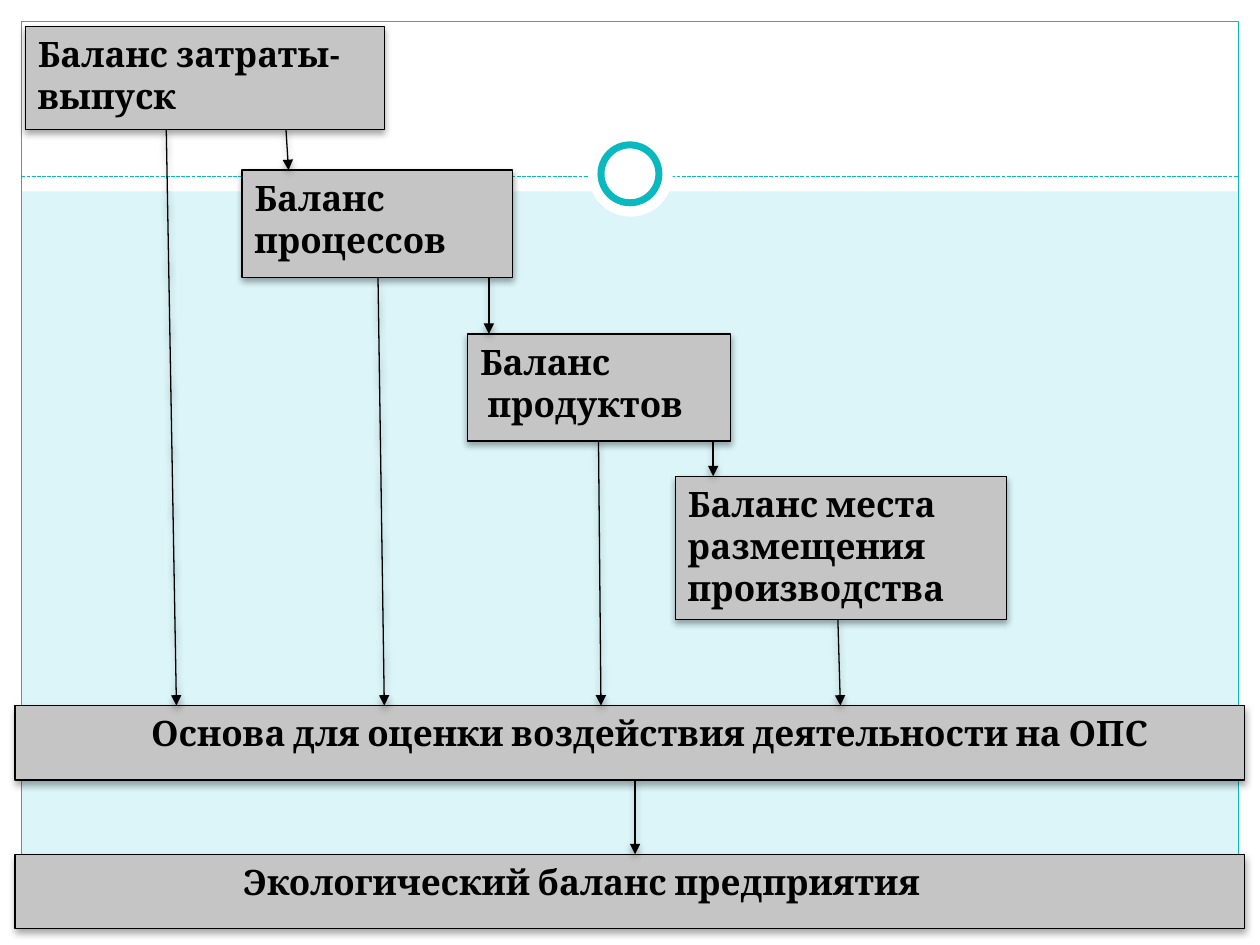
from lxml import etree
from pptx import Presentation
from pptx.dml.color import RGBColor
from pptx.enum.dml import MSO_LINE
from pptx.enum.shapes import MSO_CONNECTOR, MSO_SHAPE
from pptx.enum.text import MSO_ANCHOR, PP_ALIGN
from pptx.oxml import parse_xml
from pptx.oxml.ns import nsdecls, qn
from pptx.util import Inches, Pt

RECT, OVAL = MSO_SHAPE.RECTANGLE, MSO_SHAPE.OVAL
STRAIGHT, DASH = MSO_CONNECTOR.STRAIGHT, MSO_LINE.SQUARE_DOT
LEFT, TOP = PP_ALIGN.LEFT, MSO_ANCHOR.TOP
COLORS = {name: RGBColor.from_string(value) for name, value in {
    "back": "DBF5F9", "white": "FFFFFF", "accent": "0AB8BF",
    "box": "C5C5C5", "ink": "000000"}.items()}
SHADOW = (f'<a:effectLst {nsdecls("a")}><a:outerShdw blurRad="{Pt(4)}" dist="{Pt(2)}" '
          'dir="5400000" rotWithShape="0"><a:srgbClr val="000000"><a:alpha val="35000"/>'
          '</a:srgbClr></a:outerShdw></a:effectLst>')

deck = Presentation()
deck.slide_width, deck.slide_height = Inches(10), Inches(7.5)
COLUMN, ROW = deck.slide_width / 10, deck.slide_height / 7.5  # 10 x 7.5 grid
page = deck.slides.add_slide(deck.slide_layouts[6])
page.background.fill.solid()
page.background.fill.fore_color.rgb = COLORS["back"]


def add_block(kind, left, top, width, height, fill=None, line=None, weight=0.75):
    block = page.shapes.add_shape(kind, int(left * COLUMN), int(top * ROW),
                                  int(width * COLUMN), int(height * ROW))
    block.shadow.inherit = False
    if fill:
        block.fill.solid()
        block.fill.fore_color.rgb = COLORS[fill]
    else:
        block.fill.background()
    if line:
        block.line.color.rgb = COLORS[line]
        block.line.width = Pt(weight)
    else:
        block.line.fill.background()
    return block


def add_line(x1, y1, x2, y2, color):
    line = page.shapes.add_connector(STRAIGHT, int(x1 * COLUMN), int(y1 * ROW),
                                     int(x2 * COLUMN), int(y2 * ROW))
    line.line.color.rgb = COLORS[color]
    line.line.width = Pt(0.75)
    return line


# Page frame: white margins and header, thin border, dashed rule and ring
EDGE, HEADER = 0.17, 1.52
for area in [(0, 7.5 - EDGE, 10, EDGE), (0, 0, 10, HEADER),
             (0, 0, EDGE, 7.5), (10 - EDGE, 0, EDGE, 7.5)]:
    add_block(RECT, *area, fill="white")
add_block(RECT, EDGE, EDGE, 10 - 2 * EDGE, 7.5 - 2 * EDGE, line="accent")
rule = add_line(EDGE, 1.4, 10 - EDGE, 1.4, "accent")
rule.line.dash_style = DASH
rule._element.spPr.append(parse_xml(f'<a:effectLst {nsdecls("a")}/>'))
add_block(OVAL, 4.67, 1.05, 0.67, 0.67, fill="white")
add_block(OVAL, 4.77, 1.15, 0.46, 0.46, fill="white", line="accent", weight=4)

# Balance steps and the two result bars: left, top, width, height, text inset, lines
BASIS, RESULT, BAR = 5.6, 6.78, 0.59
boxes = [
    (0.2, 0.21, 2.85, 0.82, 0.1, ["Баланс затраты-выпуск"]),
    (1.92, 1.35, 2.15, 0.85, 0.1, ["Баланс", "процессов"]),
    (3.71, 2.65, 2.09, 0.85, 0.1, ["Баланс", " продуктов"]),
    (5.36, 3.78, 2.63, 1.14, 0.1, ["Баланс места размещения", "производства"]),
    (0.12, RESULT, 9.76, BAR, 1.81, ["Экологический баланс предприятия"]),
    (0.12, BASIS, 9.76, BAR, 1.08, ["Основа для оценки воздействия деятельности на ОПС"]),
]
for left, top, width, height, inset, lines in boxes:
    box = add_block(RECT, left, top, width, height, fill="box", line="ink")
    box._element.spPr.replace(box._element.spPr.find(qn("a:effectLst")), parse_xml(SHADOW))
    frame = box.text_frame
    frame.word_wrap = True
    frame.vertical_anchor = TOP
    frame.margin_left = Inches(inset)
    frame.text = "\n".join(lines)
    for para in frame.paragraphs:
        para.alignment = LEFT
        para.font.name, para.font.size, para.font.bold = "Cambria", Pt(20), True
        para.font.color.rgb = COLORS["ink"]

# Arrows: each step leads to the next one and to the basis bar
step_tops = [top for _, top, *_ in boxes[:4]]
step_ends = [top + height for _, top, _, height, *_ in boxes[:4]]
to_basis = [(1.32, 1.4), (3, 3.05), (4.75, 4.77), (6.65, 6.67)]
to_next = [(2.27, 2.29), (3.88, 3.88), (5.66, 5.66)]
arrows = [(5.04, BASIS + BAR, 5.04, RESULT)]
arrows += [(x1, end, x2, BASIS) for (x1, x2), end in zip(to_basis, step_ends)]
arrows += [(x1, end, x2, top) for (x1, x2), end, top in zip(to_next, step_ends, step_tops[1:])]
for ends in arrows:
    arrow = add_line(*ends, "ink")
    etree.SubElement(arrow.line._get_or_add_ln(), qn("a:tailEnd"), type="triangle")
    arrow._element.spPr.append(parse_xml(SHADOW))

deck.save("out.pptx")
